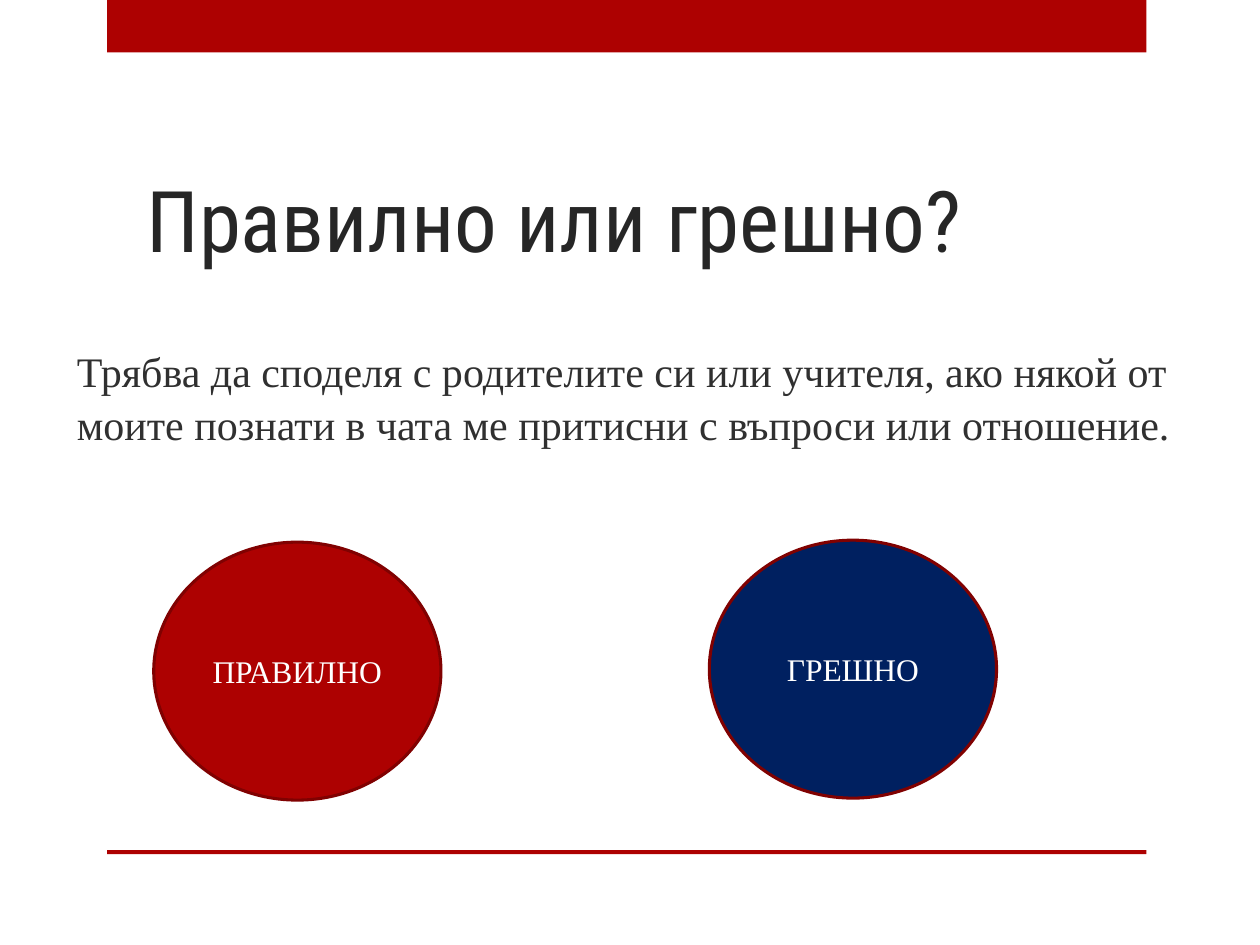
from pptx import Presentation
from pptx.dml.color import RGBColor
from pptx.enum.shapes import MSO_SHAPE as Shape
from pptx.enum.text import MSO_ANCHOR as Anchor, PP_ALIGN as Align
from pptx.util import Cm, Pt

COLORS = {
    "red": "AD0101",
    "outline": "800101",
    "navy": "002060",
    "title": "262626",
    "statement": "303030",
    "white": "FFFFFF",
}
SERIF = "Times New Roman"
CONDENSED = "Roboto Condensed"


def color(name):
    return RGBColor.from_string(COLORS[name])


def write(frame, text, size, ink, font=SERIF, anchor=Anchor.MIDDLE,
          align=Align.LEFT, spacing=1.0):
    frame.word_wrap = True
    frame.vertical_anchor = anchor
    paragraph = frame.paragraphs[0]
    paragraph.alignment = align
    paragraph.line_spacing = spacing
    run = paragraph.add_run()
    run.text = text
    run.font.name = font
    run.font.size = Pt(size)
    run.font.color.rgb = color(ink)


def add_text(slide, box, text, **style):
    textbox = slide.shapes.add_textbox(*map(Cm, box))
    write(textbox.text_frame, text, **style)


def add_figure(slide, kind, box, fill, outline=None):
    figure = slide.shapes.add_shape(kind, *map(Cm, box))
    figure.shadow.inherit = False
    figure.fill.solid()
    figure.fill.fore_color.rgb = color(fill)
    if outline:
        figure.line.color.rgb = color(outline)
        figure.line.width = Pt(1.75)
    else:
        figure.line.fill.background()
    return figure


def add_bar(slide, top, height):
    add_figure(slide, Shape.RECTANGLE, (2.16, top, 20.95, height), "red")


def add_answer(slide, left, top, text, fill):
    answer = add_figure(slide, Shape.OVAL, (left, top, 5.79, 5.2), fill, "outline")
    write(answer.text_frame, text, size=18, ink="white", align=Align.CENTER)


def main():
    deck = Presentation()
    deck.slide_width, deck.slide_height = Cm(25.4), Cm(19.05)
    slide = deck.slides.add_slide(deck.slide_layouts[6])

    add_bar(slide, 0, 1.06)
    add_bar(slide, 17.14, 0.08)
    add_text(slide, (2.7, 1.11, 18.85, 4.45), "Правилно или грешно?",
             size=48.6, ink="title", font=CONDENSED, anchor=Anchor.BOTTOM)
    add_text(slide, (1.3, 5.54, 22.86, 4.88),
             "Трябва да споделя с родителите си или учителя, ако някой от "
             "моите познати в чата ме притисни с въпроси или отношение.",
             size=24, ink="statement", spacing=1.05)
    add_answer(slide, 3.1, 10.93, "ПРАВИЛНО", "red")
    add_answer(slide, 14.3, 10.89, "ГРЕШНО", "navy")

    deck.save("out.pptx")


if __name__ == "__main__":
    main()
